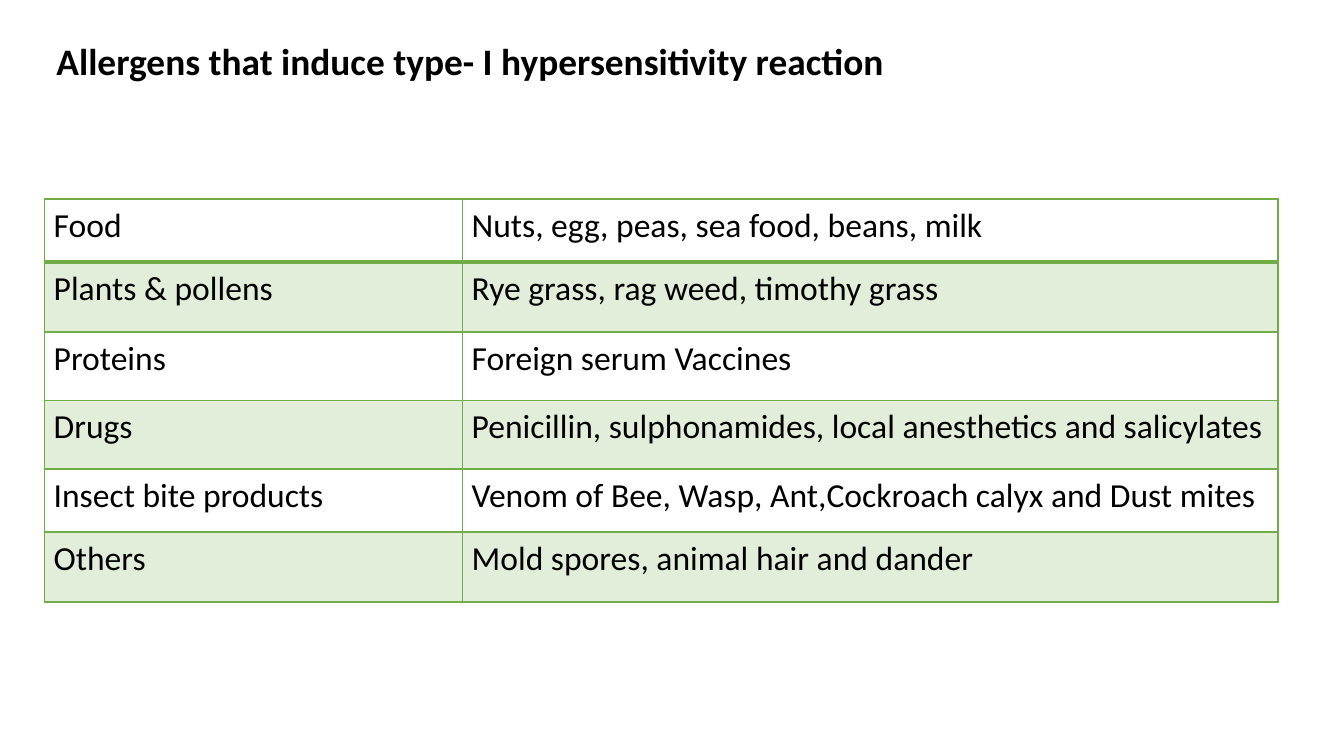
from lxml.etree import SubElement
from pptx import Presentation
from pptx.dml.color import RGBColor
from pptx.enum.text import MSO_ANCHOR, PP_ALIGN
from pptx.oxml.ns import qn
from pptx.util import Inches, Pt

BLACK = RGBColor(0x00, 0x00, 0x00)
GREEN = RGBColor(0x70, 0xAD, 0x47)
FONT = "Calibri"

ALLERGENS = [
    ("Food", "Nuts, egg, peas, sea food, beans, milk"),
    ("Plants & pollens", "Rye grass, rag weed, timothy grass"),
    ("Proteins", "Foreign serum Vaccines"),
    ("Drugs", "Penicillin, sulphonamides, local anesthetics and salicylates"),
    ("Insect bite products", "Venom of Bee, Wasp, Ant,Cockroach calyx and Dust mites"),
    ("Others", "Mold spores, animal hair and dander"),
]
COLUMN_WIDTHS = [3.11, 6.07]
ROW_HEIGHTS = [0.47, 0.52, 0.51, 0.51, 0.47, 0.52]


def format_text(text_frame, size, line_spacing, bold=False):
    paragraph = text_frame.paragraphs[0]
    paragraph.alignment = PP_ALIGN.LEFT
    paragraph.line_spacing = line_spacing
    font = paragraph.runs[0].font
    font.name = FONT
    font.size = Pt(size)
    font.bold = bold
    font.color.rgb = BLACK


def add_title(slide, wording):
    title = slide.shapes.title
    title.left, title.top = Inches(0.32), Inches(0.14)
    title.width, title.height = Inches(10.51), Inches(0.67)
    title.text_frame.text = wording
    title.text_frame.vertical_anchor = MSO_ANCHOR.MIDDLE
    format_text(title.text_frame, 20, 0.9, bold=True)


def add_green_fill(parent, opacity=100):
    fill = SubElement(parent, qn("a:solidFill"))
    color = SubElement(fill, qn("a:srgbClr"), val=str(GREEN))
    if opacity < 100:
        SubElement(color, qn("a:alpha"), val=str(opacity * 1000))


def set_borders(cell, top_width, bottom_width):
    properties = cell._tc.get_or_add_tcPr()
    widths = {"a:lnL": 1, "a:lnR": 1, "a:lnT": top_width, "a:lnB": bottom_width}
    for side, width in widths.items():
        add_green_fill(SubElement(properties, qn(side), w=str(Pt(width))))


def fill_cell(cell, wording, row_index):
    cell.text_frame.text = wording
    cell.margin_left = cell.margin_right = Inches(0.07)
    cell.margin_top = cell.margin_bottom = 0
    format_text(cell.text_frame, 18, 1.15)
    set_borders(cell, 2 if row_index == 1 else 1, 2 if row_index == 0 else 1)
    if row_index % 2:
        add_green_fill(cell._tc.get_or_add_tcPr(), opacity=20)
    else:
        cell.fill.background()


def add_allergen_table(slide):
    table = slide.shapes.add_table(
        len(ALLERGENS), len(COLUMN_WIDTHS), Inches(0.33), Inches(1.48),
        Inches(sum(COLUMN_WIDTHS)), Inches(sum(ROW_HEIGHTS))).table
    table.first_row = False
    table.horz_banding = False
    for column, width in zip(table.columns, COLUMN_WIDTHS):
        column.width = Inches(width)
    for row_index, (height, entries) in enumerate(zip(ROW_HEIGHTS, ALLERGENS)):
        row = table.rows[row_index]
        row.height = Inches(height)
        for cell, wording in zip(row.cells, entries):
            fill_cell(cell, wording, row_index)


def main():
    presentation = Presentation()
    presentation.slide_width = Inches(10)
    presentation.slide_height = Inches(10) * 9 // 16
    slide = presentation.slides.add_slide(presentation.slide_layouts[5])
    add_title(slide, "Allergens that induce type- I hypersensitivity reaction")
    add_allergen_table(slide)
    presentation.save("out.pptx")


if __name__ == "__main__":
    main()
